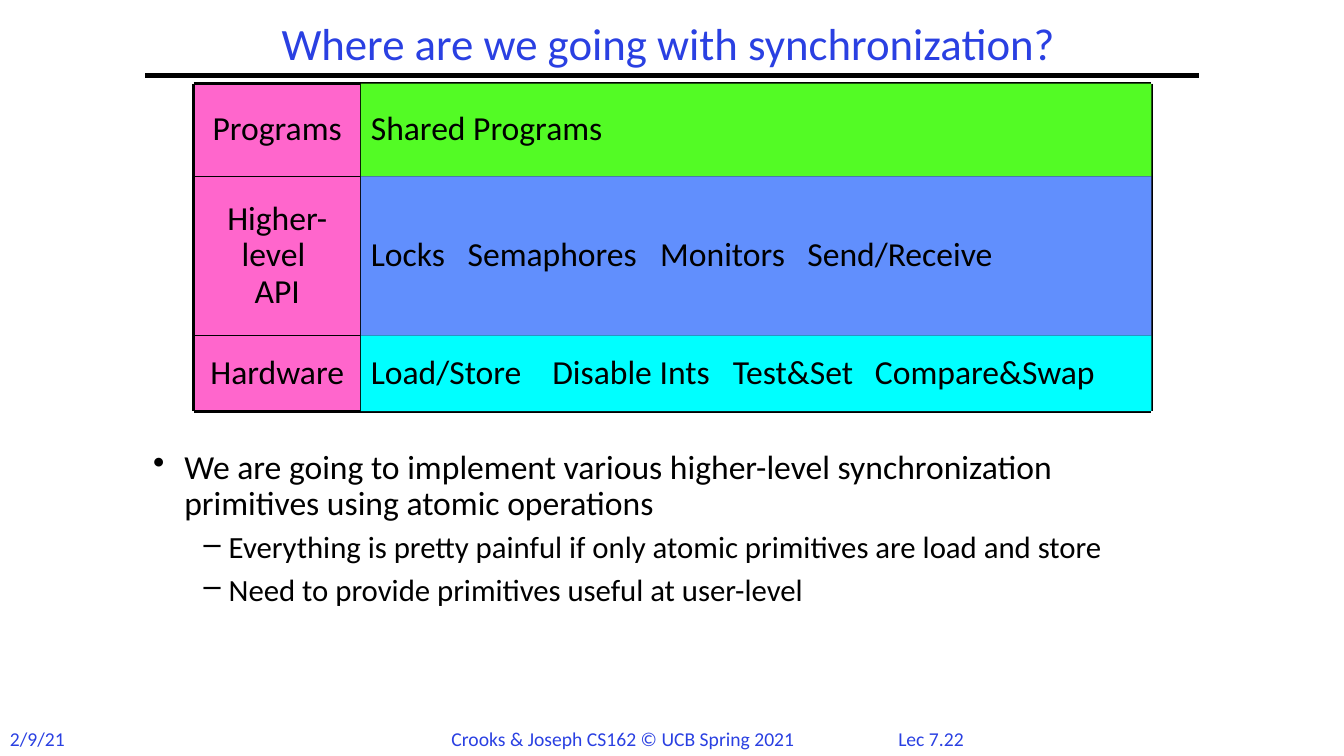
from lxml import etree
from pptx import Presentation
from pptx.dml.color import RGBColor
from pptx.enum import shapes, text
from pptx.oxml.ns import qn
from pptx.util import Inches, Pt

COLORS = {"black": "000000", "blue": "2A40E2", "pink": "FF66CC",
          "green": "53FB25", "periwinkle": "618FFD", "cyan": "00FFFF"}
FONT = "Calibri"
LEFT, CENTER = text.PP_ALIGN.LEFT, text.PP_ALIGN.CENTER
MIDDLE = text.MSO_ANCHOR.MIDDLE

TITLE = "Where are we going with synchronization?"
# label lines, height, fill, items, tab stops that start each later item
LAYERS = [
    (["Programs"], 0.92, "green", ["Shared Programs"], []),
    (["Higher-level ", "API"], 1.58, "periwinkle",
     ["Locks", "Semaphores", "Monitors", "Send/Receive"], [0.96, 2.87, 4.33]),
    (["Hardware"], 0.75, "cyan",
     ["Load/Store", "Disable Ints", "Test&Set", "Compare&Swap"], [1.8, 3.59, 5.0]),
]
# bullet, text, size, left margin, hanging indent
POINTS = [
    ("•", "We are going to implement various higher-level synchronization "
          "primitives using atomic operations", 24, 0.31, 0.31),
    ("–", "Everything is pretty painful if only atomic primitives are load and store",
     22, 0.75, 0.25),
    ("–", "Need to provide primitives useful at user-level", 22, 0.75, 0.25),
]
# text, left, width, alignment
FOOTERS = [
    ("Lec 7.22", 8.75, 0.97, CENTER),
    ("2/9/21", 0, 0.8, LEFT),
    ("Crooks & Joseph CS162 © UCB Spring 2021", 4.38, 3.76, LEFT),
]
GRID_LEFT, GRID_SPLIT, GRID_RIGHT, GRID_TOP = 1.92, 3.58, 11.42, 0.83


def rgb(name):
    return RGBColor.from_string(COLORS[name])


def add_line(slide, x1, y1, x2, y2, width):
    line = slide.shapes.add_connector(shapes.MSO_CONNECTOR.STRAIGHT,
                                      *map(Inches, (x1, y1, x2, y2)))
    line.line.color.rgb = rgb("black")
    line.line.width = Pt(width)
    etree.SubElement(line._element.spPr, qn("a:effectLst"))


def add_text_box(slide, left, top, width, height):
    box = slide.shapes.add_textbox(*map(Inches, (left, top, width, height)))
    box.text_frame.word_wrap = True
    return box.text_frame


def write(paragraph, lines, size, color="black", align=LEFT, spaced=True):
    """Fill a paragraph with lines; spaced text is tight with a gap of 30% above."""
    paragraph.alignment = align
    if spaced:
        paragraph.line_spacing = 0.9
        paragraph.space_before = Pt(size * 0.3)
    for number, words in enumerate(lines):
        if number:
            paragraph.add_line_break()
        run = paragraph.add_run()
        run.text = words
        run.font.name = FONT
        run.font.size = Pt(size)
        run.font.color.rgb = rgb(color)


def add_cell(slide, left, top, width, height, fill, lines, align, stops=()):
    cell = slide.shapes.add_shape(shapes.MSO_SHAPE.RECTANGLE,
                                  *map(Inches, (left, top, width, height)))
    cell.shadow.inherit = False
    cell.fill.solid()
    cell.fill.fore_color.rgb = rgb(fill)
    cell.line.fill.background()
    frame = cell.text_frame
    frame.word_wrap = True
    frame.vertical_anchor = MIDDLE
    paragraph = frame.paragraphs[0]
    write(paragraph, lines, 24, align=align)
    if stops:
        tabs = etree.SubElement(paragraph._p.get_or_add_pPr(), qn("a:tabLst"))
        for stop in stops:
            etree.SubElement(tabs, qn("a:tab"), pos=str(Inches(stop)), algn="l")


def add_layer_grid(slide):
    edges = [GRID_TOP]
    for layer in LAYERS:
        edges.append(edges[-1] + layer[1])
    for (label, height, *_), top in zip(LAYERS, edges):
        add_cell(slide, GRID_LEFT, top, GRID_SPLIT - GRID_LEFT, height,
                 "pink", label, CENTER)
    for y in edges:
        add_line(slide, GRID_LEFT, y, GRID_RIGHT, y,
                 2.25 if y in (edges[0], edges[-1]) else 1)
    for x, width in ((GRID_LEFT, 2.25), (GRID_SPLIT, 1), (GRID_RIGHT, 2.25)):
        add_line(slide, x, edges[0], x, edges[-1], width)
    for (_, height, fill, items, stops), top in zip(LAYERS, edges):
        add_cell(slide, GRID_SPLIT, top, GRID_RIGHT - GRID_SPLIT, height,
                 fill, ["\t".join(items)], LEFT, stops)


def add_points(slide):
    frame = add_text_box(slide, 1.42, 4.42, 10.08, 2.33)
    for number, (bullet, words, size, margin, hang) in enumerate(POINTS):
        paragraph = frame.add_paragraph() if number else frame.paragraphs[0]
        write(paragraph, [words], size)
        properties = paragraph._p.get_or_add_pPr()
        properties.set("marL", str(Inches(margin)))
        properties.set("indent", str(-Inches(hang)))
        etree.SubElement(properties, qn("a:buChar"), char=bullet)


def main():
    presentation = Presentation()
    presentation.slide_width = Inches(13.33)
    presentation.slide_height = Inches(7.5)
    slide = presentation.slides.add_slide(presentation.slide_layouts[6])

    add_line(slide, 1.44, 0.75, 11.89, 0.75, 3)
    for words, left, width, align in FOOTERS:
        frame = add_text_box(slide, left, 7.16, width, 0.34)
        write(frame.paragraphs[0], [words], 14, "blue", align, spaced=False)
    title = add_text_box(slide, 2.17, 0.17, 8.92, 0.58)
    title.vertical_anchor = MIDDLE
    write(title.paragraphs[0], [TITLE], 32, "blue", CENTER, spaced=False)
    title.paragraphs[0].line_spacing = 0.9
    add_points(slide)
    add_layer_grid(slide)

    presentation.save("out.pptx")


if __name__ == "__main__":
    main()
